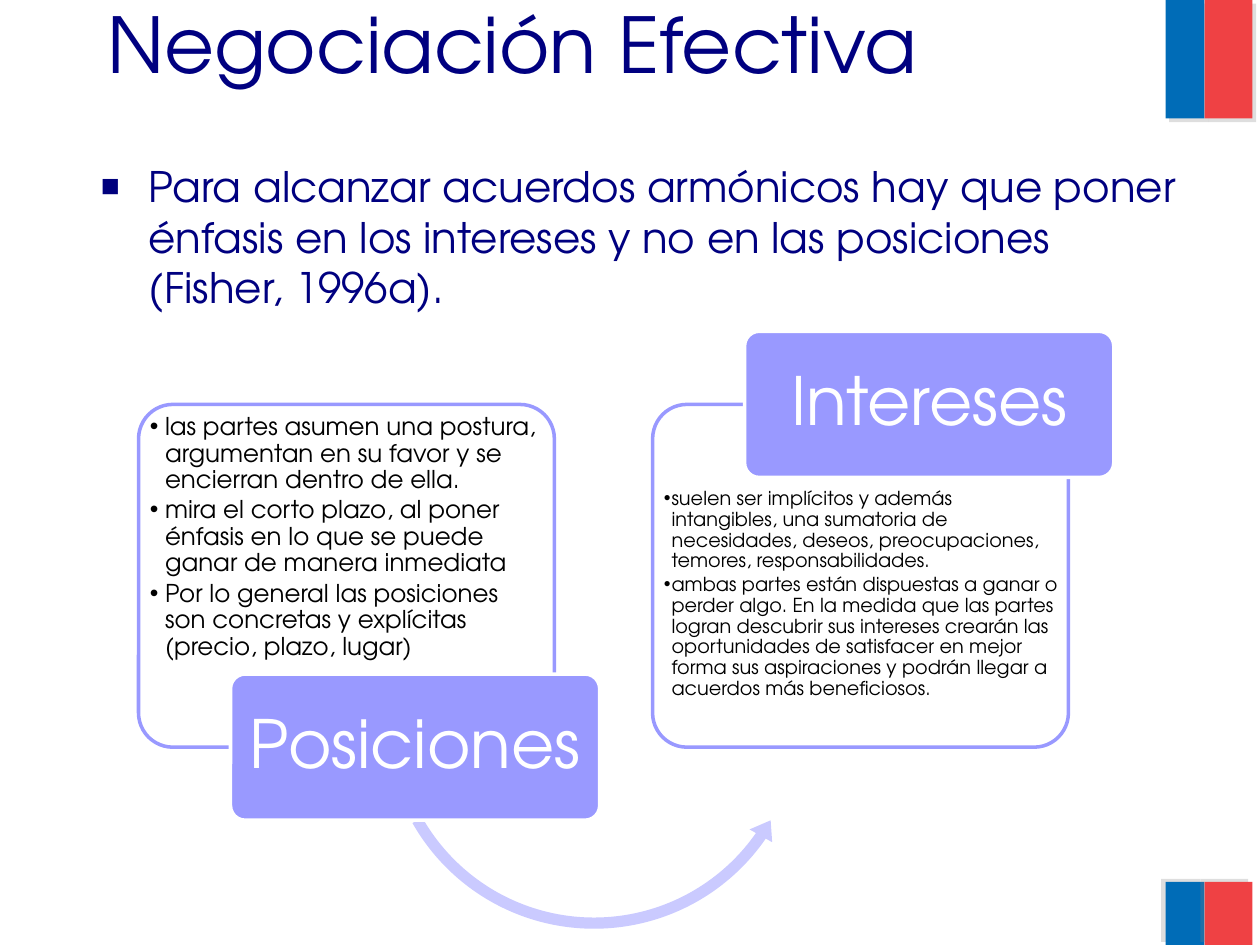
from lxml import etree
from pptx import Presentation
from pptx.dml.color import RGBColor
from pptx.enum.shapes import MSO_SHAPE
from pptx.enum.text import MSO_ANCHOR, MSO_AUTO_SIZE, PP_ALIGN
from pptx.oxml.ns import qn
from pptx.util import Inches, Pt

RECTANGLE = MSO_SHAPE.RECTANGLE
ROUNDED = MSO_SHAPE.ROUNDED_RECTANGLE
CURVED_ARROW = MSO_SHAPE.LEFT_CIRCULAR_ARROW
LEFT, CENTER = PP_ALIGN.LEFT, PP_ALIGN.CENTER
TOP, MIDDLE = MSO_ANCHOR.TOP, MSO_ANCHOR.MIDDLE
NO_AUTOFIT = MSO_AUTO_SIZE.NONE

FONT = "TeX Gyre Adventor"
NAVY, BLUE, RED = "000080", "006CB7", "EF4144"
LILAC, PALE_LILAC = "9999FF", "CACAFF"
WHITE, BLACK, GRAY = "FFFFFF", "000000", "808080"

PANEL_TOP, PANEL_WIDTH, PANEL_HEIGHT = 3.21, 3.3, 2.72
LABEL_SHIFT, LABEL_WIDTH, LABEL_HEIGHT = 0.73, 2.93, 1.16

# title, panel left, label top, text top, text size, bullet indent, points
PANELS = [
    ("Posiciones", 1.1, 5.35, 3.27, 14, 0.12, [
        "las partes asumen una postura, argumentan en su favor y se encierran dentro de ella.",
        "mira el corto plazo, al poner énfasis en lo que se puede ganar de manera inmediata",
        "Por lo general las posiciones son concretas y explícitas (precio, plazo, lugar)",
    ]),
    ("Intereses", 5.18, 2.63, 3.86, 11, 0.06, [
        "suelen ser implícitos y además intangibles, una sumatoria de necesidades, deseos, "
        "preocupaciones, temores, responsabilidades.",
        "ambas partes están dispuestas a ganar o perder algo. En la medida que las partes "
        "logran descubrir sus intereses crearán las oportunidades de satisfacer en mejor "
        "forma sus aspiraciones y podrán llegar a acuerdos más beneficiosos.",
    ]),
]


def color(hex_value):
    return RGBColor.from_string(hex_value)


def add_element(parent, tag, **attributes):
    element = etree.SubElement(parent, qn(tag))
    for name, value in attributes.items():
        element.set(name, str(value))
    return element


class SlideBuilder:
    """Holds the slide and its font, and adds each kind of element."""

    def __init__(self, slide, font):
        self.slide = slide
        self.font = font

    def place(self, shape, left, top, width, height):
        shape.left, shape.top = Inches(left), Inches(top)
        shape.width, shape.height = Inches(width), Inches(height)

    def format_frame(self, frame, anchor, horizontal=0.1, vertical=0.05):
        frame.word_wrap = True
        frame.auto_size = NO_AUTOFIT
        frame.vertical_anchor = anchor
        frame.margin_left = frame.margin_right = Inches(horizontal)
        frame.margin_top = frame.margin_bottom = Inches(vertical)

    def add_text(self, paragraph, text, size, text_color, align=LEFT, spacing=1.0, after=0):
        paragraph.alignment = align
        paragraph.line_spacing = spacing
        paragraph.space_before, paragraph.space_after = Pt(0), Pt(after)
        run = paragraph.add_run()
        run.text = text
        run.font.name, run.font.size = self.font, Pt(size)
        run.font.color.rgb = color(text_color)

    def bullet(self, paragraph, character, indent, bullet_color, percent=100):
        properties = paragraph._p.get_or_add_pPr()
        properties.set("marL", str(Inches(indent)))
        properties.set("indent", str(-Inches(indent)))
        add_element(add_element(properties, "a:buClr"), "a:srgbClr", val=bullet_color)
        add_element(properties, "a:buSzPct", val=percent * 1000)
        add_element(properties, "a:buFont", typeface="Arial")
        add_element(properties, "a:buChar", char=character)

    def title(self, text, *box):
        shape = self.slide.shapes.title
        self.place(shape, *box)
        self.format_frame(shape.text_frame, TOP)
        self.add_text(shape.text_frame.paragraphs[0], text, 44, NAVY)

    def body(self, text, *box):
        shape = self.slide.placeholders[1]
        self.place(shape, *box)
        self.format_frame(shape.text_frame, MIDDLE)
        paragraph = shape.text_frame.paragraphs[0]
        self.add_text(paragraph, text, 24, NAVY)
        self.bullet(paragraph, "■", 0.38, "00007D", 75)

    def shape(self, kind, box, fill, line=None, adjustments=()):
        shape = self.slide.shapes.add_shape(kind, *map(Inches, box))
        shape.shadow.inherit = False
        for index, value in enumerate(adjustments):
            shape.adjustments[index] = value
        shape.fill.solid()
        shape.fill.fore_color.rgb = color(fill)
        if line:
            shape.line.color.rgb = color(line)
            shape.line.width = Pt(2)
        else:
            shape.line.fill.background()
        return shape

    def shadowed_bar(self, box, fill, angle):
        bar = self.shape(RECTANGLE, box, fill)
        effects = bar._element.spPr.find(qn("a:effectLst"))
        shadow = add_element(effects, "a:outerShdw", blurRad=0, dist=Pt(3), dir=angle * 60000)
        shadow_color = add_element(shadow, "a:srgbClr", val=GRAY)
        add_element(shadow_color, "a:alpha", val=25000)

    def panel(self, *box):
        panel = self.shape(ROUNDED, box, WHITE, LILAC, [0.1])
        fill_color = panel._element.spPr.find(qn("a:solidFill"))[0]
        add_element(fill_color, "a:alpha", val=90000)

    def label(self, text, *box):
        label = self.shape(ROUNDED, box, LILAC, WHITE, [0.1])
        self.format_frame(label.text_frame, MIDDLE, 0.08)
        self.add_text(label.text_frame.paragraphs[0], text, 38, WHITE, CENTER, 0.9)

    def bullet_list(self, points, size, indent, *box):
        frame = self.slide.shapes.add_textbox(*map(Inches, box)).text_frame
        self.format_frame(frame, TOP, 0.02, 0.02)
        for index, point in enumerate(points):
            paragraph = frame.add_paragraph() if index else frame.paragraphs[0]
            paragraph.level = 1
            self.add_text(paragraph, point, size, BLACK, spacing=0.9, after=round(size * 0.15, 1))
            self.bullet(paragraph, "•", indent, BLACK)


def main():
    presentation = Presentation()
    presentation.slide_width, presentation.slide_height = Inches(10), Inches(7.5)
    slide = presentation.slides.add_slide(presentation.slide_layouts[1])
    builder = SlideBuilder(slide, FONT)

    for top, height, angle in [(0, 0.94, 45), (7, 0.5, 215)]:
        builder.shadowed_bar((9.25, top, 0.31, height), BLUE, angle)
        builder.shadowed_bar((9.56, top, 0.38, height), RED, angle)

    builder.title("Negociación Efectiva", 0.75, -0.08, 8.5, 1.61)
    builder.body(
        "Para alcanzar acuerdos armónicos hay que poner énfasis en los intereses "
        "y no en las posiciones (Fisher, 1996a).", 0.7, 1.22, 8.75, 1.31)

    builder.shape(CURVED_ARROW, (3, 4, 3.43, 3.43), PALE_LILAC,
                  adjustments=[0.026, 3.098, 20.854, 90.245, 0.03])
    for title, left, label_top, text_top, size, indent, points in PANELS:
        builder.panel(left, PANEL_TOP, PANEL_WIDTH, PANEL_HEIGHT)
        builder.bullet_list(points, size, indent, left + 0.07, text_top, 3.17, 2.01)
        builder.label(title, left + LABEL_SHIFT, label_top, LABEL_WIDTH, LABEL_HEIGHT)

    presentation.save("out.pptx")


if __name__ == "__main__":
    main()
